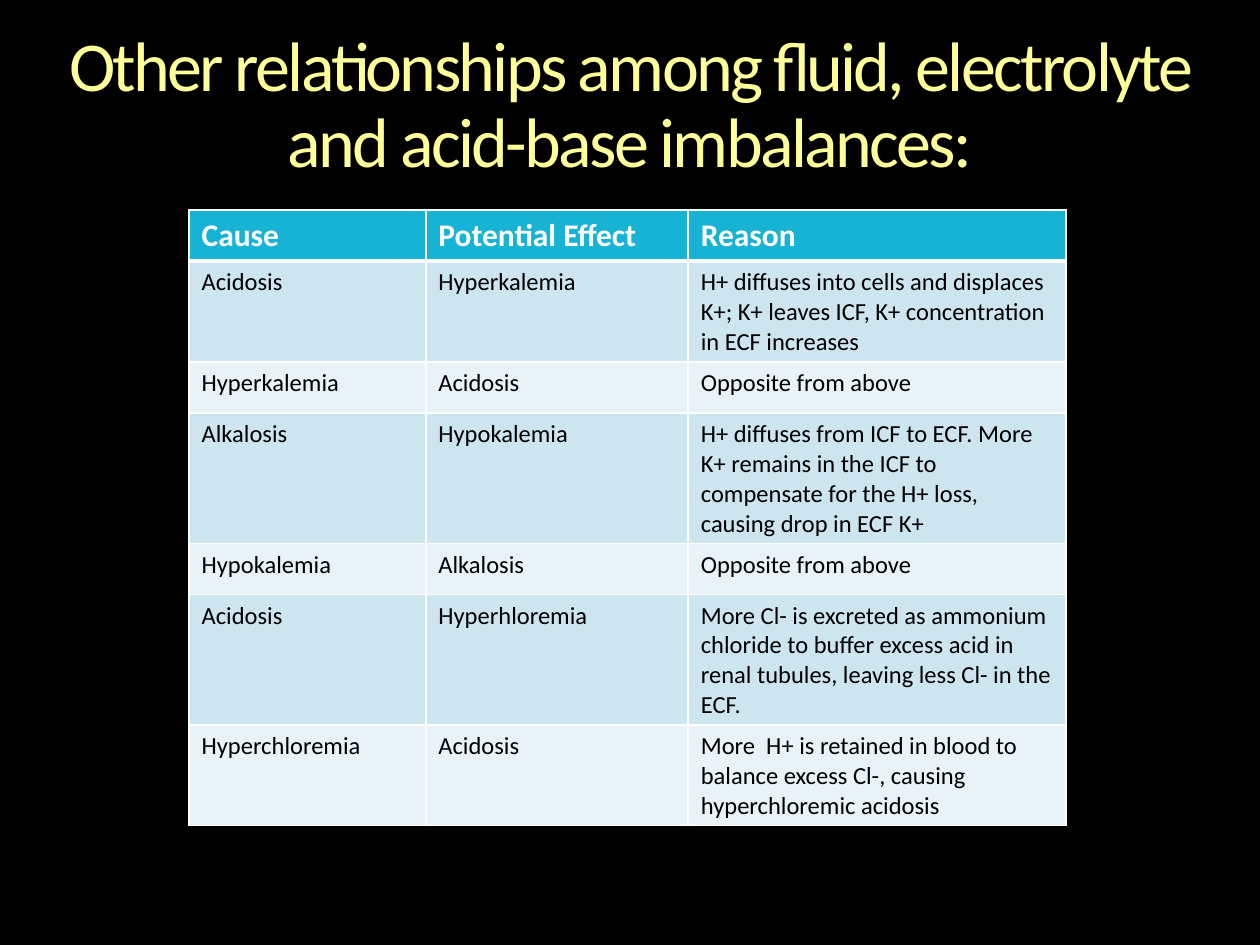
from dataclasses import dataclass

from lxml import etree
from pptx import Presentation
from pptx.dml.color import RGBColor
from pptx.enum.text import MSO_ANCHOR, PP_ALIGN
from pptx.oxml.ns import qn
from pptx.util import Pt

CENTER = PP_ALIGN.CENTER
TOP = MSO_ANCHOR.TOP


@dataclass(frozen=True)
class Theme:
    font: str = "Calibri"
    background: str = "000000"
    title: str = "FFFF99"
    header_fill: str = "16B3D5"
    header_text: str = "FFFFFF"
    body_text: str = "000000"
    bands: tuple = ("CCE5EF", "E8F2F7")
    border: str = "FFFFFF"
    title_size: int = 40
    header_size: int = 18
    body_size: int = 14


THEME = Theme()
TITLE = "Other relationships among fluid, electrolyte and acid-base imbalances:"
COLUMN_WIDTHS = (135.3, 150, 216)
ROW_HEIGHT = 29.2
ROWS = (
    ("Cause", "Potential Effect", "Reason"),
    ("Acidosis", "Hyperkalemia",
     "H+ diffuses into cells and displaces K+; K+ leaves ICF, "
     "K+ concentration in ECF increases"),
    ("Hyperkalemia", "Acidosis", "Opposite from above"),
    ("Alkalosis", "Hypokalemia",
     "H+ diffuses from ICF to ECF. More K+ remains in the ICF to "
     "compensate for the H+ loss, causing drop in ECF K+"),
    ("Hypokalemia", "Alkalosis", "Opposite from above"),
    ("Acidosis", "Hyperhloremia",
     "More Cl- is excreted as ammonium chloride to buffer excess acid in "
     "renal tubules, leaving less Cl- in the ECF."),
    ("Hyperchloremia", "Acidosis",
     "More  H+ is retained in blood to balance excess Cl-, causing "
     "hyperchloremic acidosis"),
)


def set_fill(fill, color):
    fill.solid()
    fill.fore_color.rgb = RGBColor.from_string(color)


def style_run(r, size, color, bold=False):
    r.font.name = THEME.font
    r.font.size = Pt(size)
    r.font.bold = bold
    r.font.color.rgb = RGBColor.from_string(color)


def add_title(slide):
    sp = slide.shapes.add_textbox(Pt(30), Pt(18), Pt(660), Pt(87.4))
    tf = sp.text_frame
    tf.word_wrap = True
    tf.vertical_anchor = TOP
    tf.margin_left = tf.margin_right = tf.margin_top = tf.margin_bottom = 0
    p = tf.paragraphs[0]
    p.text = TITLE
    p.alignment = CENTER
    p.line_spacing = 0.9
    r = p.runs[0]
    style_run(r, THEME.title_size, THEME.title)
    r.font._element.set("spc", "-150")


def set_borders(cell, bottom, top):
    tcPr = cell._tc.get_or_add_tcPr()
    widths = {"a:lnL": 1, "a:lnR": 1, "a:lnT": top, "a:lnB": bottom}
    for i, (tag, width) in enumerate(widths.items()):
        ln = etree.Element(qn(tag), w=str(Pt(width)))
        solid = etree.SubElement(ln, qn("a:solidFill"))
        etree.SubElement(solid, qn("a:srgbClr"), val=THEME.border)
        tcPr.insert(i, ln)


def fill_cell(cell, text, row):
    header = row == 0
    cell.text_frame.text = text
    r = cell.text_frame.paragraphs[0].runs[0]
    if header:
        style_run(r, THEME.header_size, THEME.header_text, bold=True)
        set_fill(cell.fill, THEME.header_fill)
    else:
        style_run(r, THEME.body_size, THEME.body_text)
        set_fill(cell.fill, THEME.bands[(row - 1) % 2])
    set_borders(cell, bottom=3 if header else 1, top=3 if row == 1 else 1)


def add_relationship_table(slide):
    frame = slide.shapes.add_table(
        len(ROWS), len(COLUMN_WIDTHS), Pt(108), Pt(120),
        Pt(sum(COLUMN_WIDTHS)), Pt(ROW_HEIGHT * len(ROWS)))
    table = frame.table
    for column, width in zip(table.columns, COLUMN_WIDTHS):
        column.width = Pt(width)
    for i, texts in enumerate(ROWS):
        table.rows[i].height = Pt(ROW_HEIGHT)
        for j, text in enumerate(texts):
            fill_cell(table.cell(i, j), text, i)


def main():
    prs = Presentation()
    prs.slide_width, prs.slide_height = Pt(720), Pt(540)
    s = prs.slides.add_slide(prs.slide_layouts[6])
    set_fill(s.background.fill, THEME.background)
    add_title(s)
    add_relationship_table(s)
    prs.save("out.pptx")


if __name__ == "__main__":
    main()
